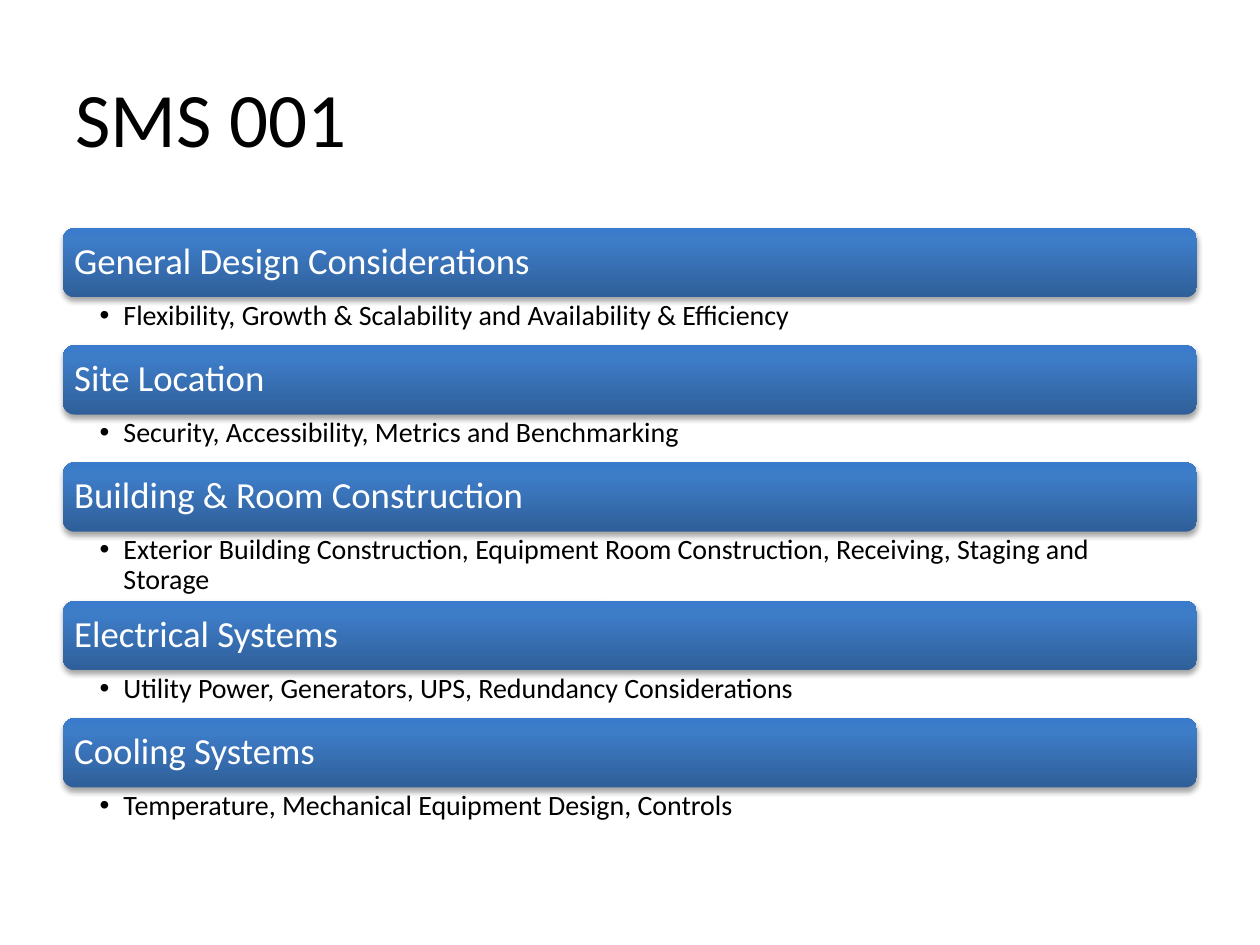
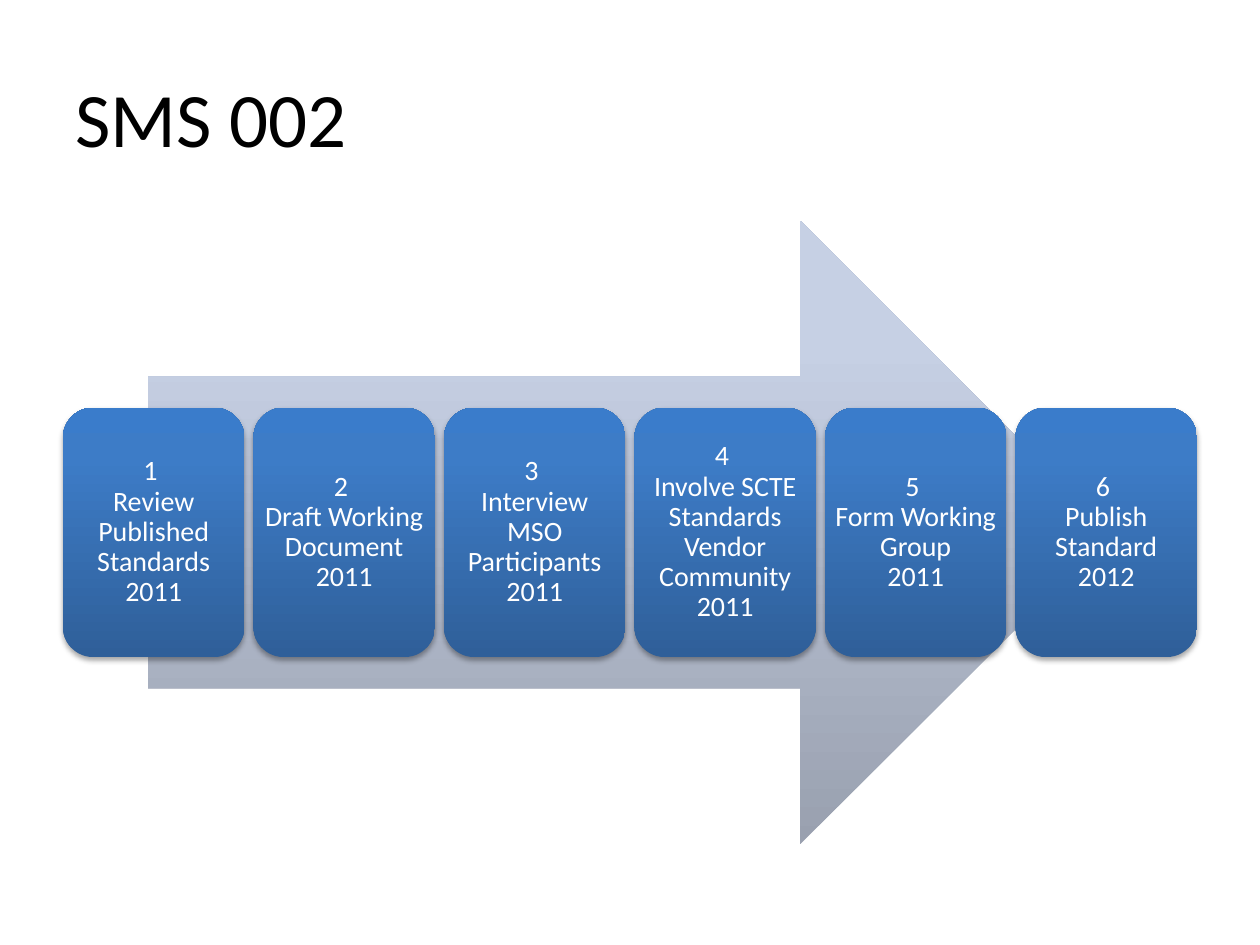
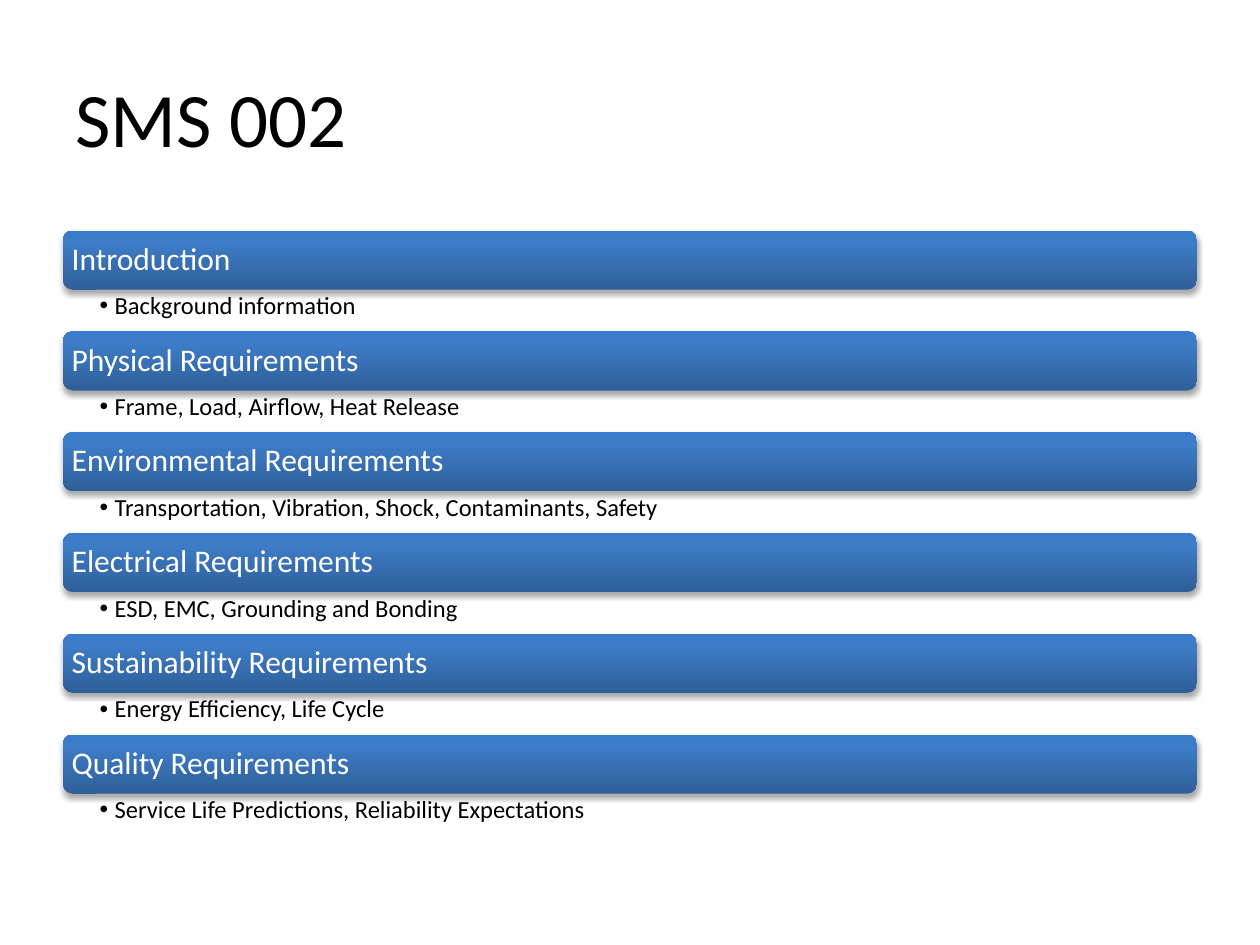
from copy import deepcopy

from lxml import etree
from pptx import Presentation
from pptx import util as u
from pptx.dml.color import RGBColor
from pptx.enum import shapes, text
from pptx.oxml import ns

COLS = 100
UNIT = u.Inches(10) / COLS
FONT = "Calibri"
BLACK, WHITE = "000000", "FFFFFF"
BLUE = ((0, "2F5F99"), (0.8, "3D7CC7"), (1, "3A7CCB"))
PALE = ((0, "99A0AF"), (0.8, "C6D0E4"), (1, "C7D1E5"))
CORNER_INSET = 0.05
LEFT, WIDTH = 5, 90

OUTLINE_LARGE = dict(top=18.1, bar=5.5, detail=3.8, tall=5.5, size=21,
                     inset=0.9, detail_size=16, hang=1.9, right=1.6)
OUTLINE_SMALL = dict(top=18.3, bar=4.7, detail=3.3, tall=4.7, size=18,
                     inset=0.7, detail_size=14, hang=1.2, right=1.4)

DESIGN = [
    ("General Design Considerations",
     "Flexibility, Growth & Scalability and Availability & Efficiency"),
    ("Site Location", "Security, Accessibility, Metrics and Benchmarking"),
    ("Building & Room Construction",
     "Exterior Building Construction, Equipment Room Construction, "
     "Receiving, Staging and Storage"),
    ("Electrical Systems",
     "Utility Power, Generators, UPS, Redundancy Considerations"),
    ("Cooling Systems", "Temperature, Mechanical Equipment Design, Controls"),
]
REQUIREMENTS = [
    ("Introduction", "Background information"),
    ("Physical Requirements", "Frame, Load, Airflow, Heat Release"),
    ("Environmental Requirements",
     "Transportation, Vibration, Shock, Contaminants, Safety"),
    ("Electrical Requirements", "ESD, EMC, Grounding and Bonding"),
    ("Sustainability Requirements", "Energy Efficiency, Life Cycle"),
    ("Quality Requirements",
     "Service Life Predictions, Reliability Expectations"),
]
STEPS = [
    ("Review Published Standards", "2011"),
    ("Draft Working Document", "2011"),
    ("Interview MSO Participants", "2011"),
    ("Involve SCTE Standards Vendor Community", "2011"),
    ("Form Working Group", "2011"),
    ("Publish Standard", "2012"),
]


def grid(*units):
    return [u.Emu(round(n * UNIT)) for n in units]


def rgb(value):
    return RGBColor.from_string(value)


def apply(target, values):
    for name, value in values.items():
        setattr(target, name, value)


def write(tf, lines, size, color, insets, anchor, spacing=0.9,
          align=text.PP_ALIGN.LEFT, hang=None):
    sides = ("margin_left", "margin_top", "margin_right", "margin_bottom")
    apply(tf, dict(zip(sides, grid(*insets)), word_wrap=True,
                   vertical_anchor=anchor))
    for i, line in enumerate(lines):
        p = tf.add_paragraph() if i else tf.paragraphs[0]
        if hang:
            add_bullet(p, hang)
        apply(p, dict(alignment=align, line_spacing=spacing))
        r = p.add_run()
        r.text = line
        apply(r.font, dict(name=FONT, size=u.Pt(size)))
        r.font.color.rgb = rgb(color)


def add_bullet(p, hang):
    pPr = p._p.get_or_add_pPr()
    indent, = grid(hang)
    pPr.set("marL", str(indent))
    pPr.set("indent", str(-indent))
    etree.SubElement(pPr, ns.qn("a:buFont"), typeface="Arial")
    etree.SubElement(pPr, ns.qn("a:buChar"), char="•")


def add_shadow(sp):
    effects = sp._element.spPr.find(ns.qn("a:effectLst"))
    shadow = etree.SubElement(
        effects, ns.qn("a:outerShdw"), blurRad=str(u.Pt(3.1)),
        dist=str(u.Pt(1.8)), dir="5400000", rotWithShape="0")
    color = etree.SubElement(shadow, ns.qn("a:srgbClr"), val=BLACK)
    etree.SubElement(color, ns.qn("a:alpha"), val="35000")


def add_gradient_shape(slide, kind, box, stops):
    sp = slide.shapes.add_shape(kind, *grid(*box))
    sp.shadow.inherit = False
    sp.line.fill.background()
    sp.fill.gradient()
    sp.fill.gradient_angle = 90
    stop_list = sp._element.spPr.xpath(".//a:gsLst")[0]
    stop_list.append(deepcopy(stop_list[-1]))
    for stop, (position, color) in zip(sp.fill.gradient_stops, stops):
        stop.color.rgb = rgb(color)
        stop.position = position
    return sp


def add_panel(slide, box, lines, size, inset, align=text.PP_ALIGN.LEFT):
    sp = add_gradient_shape(
        slide, shapes.MSO_SHAPE.ROUNDED_RECTANGLE, box, BLUE)
    add_shadow(sp)
    inner = max(0, inset - CORNER_INSET * min(box[2:]))
    write(sp.text_frame, lines, size, WHITE, [inner] * 4,
          text.MSO_ANCHOR.MIDDLE, align=align)


def add_titled_slide(prs, title):
    slide = prs.slides.add_slide(prs.slide_layouts[5])
    sp = slide.shapes.title
    sides = ("left", "top", "width", "height")
    apply(sp, dict(zip(sides, grid(LEFT, 3, WIDTH, 12.5))))
    write(sp.text_frame, [title], 44, BLACK, (1, 0.5, 1, 0.5),
          text.MSO_ANCHOR.MIDDLE, spacing=1.0)
    return slide


def outline_slide(prs, title, topics, style, tall_rows=()):
    slide = add_titled_slide(prs, title)
    top = style["top"]
    for i, (heading, detail) in enumerate(topics):
        add_panel(slide, (LEFT, top, WIDTH, style["bar"]), [heading],
                  style["size"], style["inset"])
        top += style["bar"]
        height = style["tall" if i in tall_rows else "detail"]
        note = slide.shapes.add_textbox(*grid(LEFT, top, WIDTH, height))
        write(note.text_frame, [detail], style["detail_size"], BLACK,
              (2.9, 0.3, style["right"], 0.3), text.MSO_ANCHOR.TOP,
              hang=style["hang"])
        top += height


def process_slide(prs, title, steps, box):
    slide = add_titled_slide(prs, title)
    left, top, width, height = box
    arrow_width = 0.85 * width
    add_gradient_shape(
        slide, shapes.MSO_SHAPE.RIGHT_ARROW,
        (left + (width - arrow_width) / 2, top, arrow_width, height), PALE)
    card_width, card_height = 0.16 * width, 0.4 * height
    pitch = (width - card_width) / (len(steps) - 1)
    card_top = top + (height - card_height) / 2
    for i, (task, year) in enumerate(steps):
        add_panel(slide, (left + i * pitch, card_top, card_width, card_height),
                  [f"{i + 1} ", task, year], 16, 0.7, text.PP_ALIGN.CENTER)


def main():
    prs = Presentation()
    prs.slide_width, prs.slide_height = grid(COLS, 75)
    outline_slide(prs, "SMS 001", DESIGN, OUTLINE_LARGE, tall_rows=(2,))
    process_slide(prs, "SMS 002", STEPS, (LEFT, 17.5, WIDTH, 49.5))
    outline_slide(prs, "SMS 002", REQUIREMENTS, OUTLINE_SMALL)
    prs.save("out.pptx")


if __name__ == "__main__":
    main()
